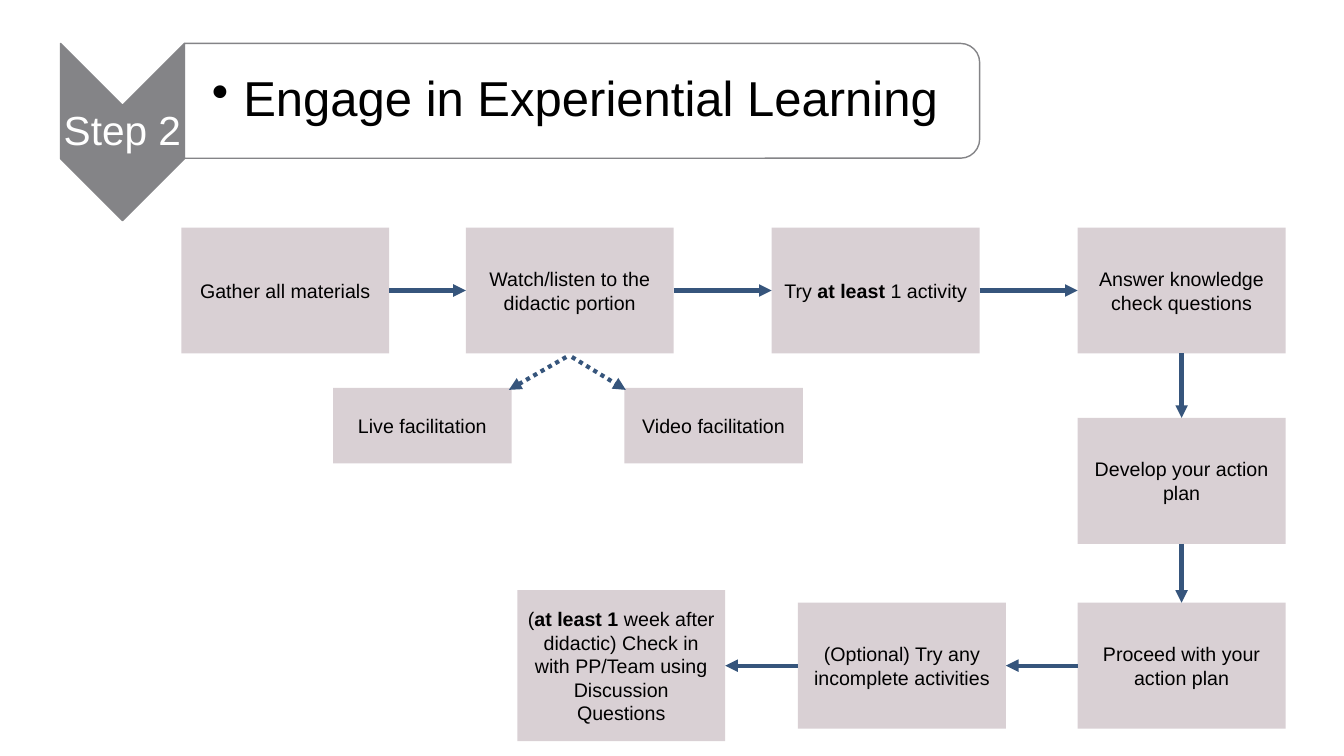
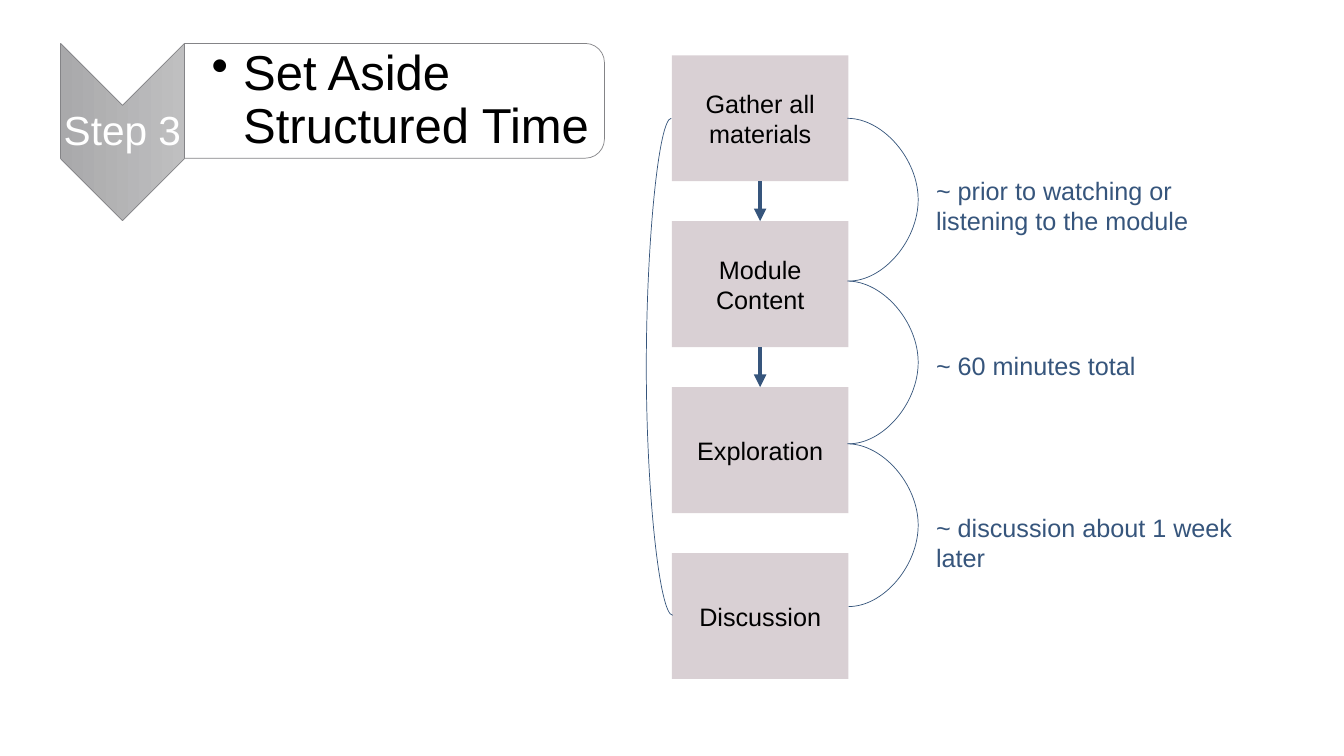
from typing import NamedTuple, Optional

from lxml import etree
from pptx import Presentation
from pptx import slide as slides
from pptx import util as u
from pptx.dml import color as colors
from pptx.enum import dml, shapes, text
from pptx.oxml import ns
from pptx.shapes import autoshape, connector
from pptx.text import text as texts

Pt = u.Pt
FONT = "Arial"
BLACK, WHITE = "000000", "FFFFFF"
PLUM, NAVY, GRAY = "6D4C5C", "36557C", "848487"
BOTTOM, LEFT, TOP, RIGHT = 2, 1, 0, 3


class Rect(NamedTuple):
    left: float
    top: float
    width: float
    height: float


class Heading(NamedTuple):
    step: str
    title: str
    tab_width: float
    line_width: float
    gradient: tuple[str, ...] = ()


class Task(NamedTuple):
    name: str
    words: str          # bold parts stand between ** marks
    rect: Rect


class Link(NamedTuple):
    start: str
    start_side: int
    end: str
    end_side: int


class Note(NamedTuple):
    words: str
    top: float
    height: float


# Shared helpers
def rgb(value: str) -> colors.RGBColor:
    return colors.RGBColor.from_string(value)


def add_xml(parent, tag: str, **attributes: str):
    return etree.SubElement(parent, ns.qn(tag), attributes)


def paint(box: autoshape.Shape, fill: str, opacity: int = 100,
          line: Optional[str] = None, line_width: float = 1) -> None:
    box.shadow.inherit = False
    box.fill.solid()
    box.fill.fore_color.rgb = rgb(fill)
    if opacity < 100:
        tint = box.fill._xPr.find(ns.qn("a:solidFill"))[0]
        add_xml(tint, "a:alpha", val=str(opacity * 1000))
    if line:
        box.line.color.rgb = rgb(line)
        box.line.width = Pt(line_width)
    else:
        box.line.fill.background()


def write(box: autoshape.Shape, words: str, size: float, color: str,
          align: text.PP_ALIGN, anchor: text.MSO_ANCHOR) -> texts._Paragraph:
    frame = box.text_frame
    frame.word_wrap = True
    frame.vertical_anchor = anchor
    para = frame.paragraphs[0]
    para.alignment = align
    for index, part in enumerate(words.split("**")):
        if part:
            span = para.add_run()
            span.text = part
            span.font.name, span.font.size = FONT, Pt(size)
            span.font.bold = index % 2 == 1
            span.font.color.rgb = rgb(color)
    return para


def add_label(page: slides.Slide, rect: Rect, inset: Optional[float] = None) -> autoshape.Shape:
    box = page.shapes.add_textbox(*map(Pt, rect))
    if inset is not None:
        frame = box.text_frame
        frame.margin_left = Pt(inset)
        frame.margin_right = frame.margin_top = frame.margin_bottom = Pt(1.5)
    return box


def add_turned(page: slides.Slide, kind: shapes.MSO_SHAPE, rect: Rect) -> autoshape.Shape:
    """Add a shape turned by 90 degrees that fills rect after turning."""
    left = rect.left + (rect.width - rect.height) / 2
    top = rect.top + (rect.height - rect.width) / 2
    box = page.shapes.add_shape(kind, Pt(left), Pt(top), Pt(rect.height), Pt(rect.width))
    box.rotation = 90
    return box


def add_line(page: slides.Slide, start: tuple[float, float], end: tuple[float, float],
             width: float, kind=shapes.MSO_CONNECTOR.STRAIGHT) -> connector.Connector:
    line = page.shapes.add_connector(kind, *map(Pt, start + end))
    line.line.color.rgb = rgb(NAVY)
    line.line.width = Pt(width)
    add_xml(line._element.spPr, "a:effectLst")
    return line


def add_arrow(page: slides.Slide, start: tuple[float, float] = (0, 0),
              end: tuple[float, float] = (0, 0), dotted: bool = False) -> connector.Connector:
    arrow = add_line(page, start, end, 3)
    if dotted:
        arrow.line.dash_style = dml.MSO_LINE.ROUND_DOT
    add_xml(arrow.line._get_or_add_ln(), "a:tailEnd", type="triangle")
    return arrow


def add_bracket(page: slides.Slide, x: float, top: float, bottom: float, reach: float) -> None:
    """Add a curve that bulges sideways by reach from a 1 pt wide frame."""
    curve = add_line(page, (x, top), (x + 1, bottom), 0.5, shapes.MSO_CONNECTOR.CURVE)
    geometry = curve._element.spPr.find(ns.qn("a:prstGeom"))
    guides = geometry.find(ns.qn("a:avLst"))
    if guides is None:
        guides = add_xml(geometry, "a:avLst")
    add_xml(guides, "a:gd", name="adj1", fmla=f"val {round(reach * 100000)}")


def add_heading(page: slides.Slide, heading: Heading) -> None:
    # Step marker
    chevron = add_turned(page, shapes.MSO_SHAPE.CHEVRON, Rect(43.25, 31, 88.5, 126.5))
    paint(chevron, GRAY, line=GRAY, line_width=heading.line_width)
    if heading.gradient:
        chevron.fill.gradient()
        chevron.fill.gradient_angle = 270
        for stop, color in zip(chevron.fill.gradient_stops, heading.gradient):
            stop.color.rgb = rgb(color)
    step = add_label(page, Rect(43.25, 75.5, 88.5, 38), 1.5)
    para = write(step, heading.step, 29, WHITE, text.PP_ALIGN.CENTER, text.MSO_ANCHOR.MIDDLE)
    para.line_spacing = 0.9

    # Title tab
    tab = add_turned(page, shapes.MSO_SHAPE.ROUND_2_SAME_RECTANGLE,
                     Rect(131.75, 31, heading.tab_width, 82))
    paint(tab, WHITE, 90, GRAY, heading.line_width)
    title = add_label(page, Rect(131.75, 35, heading.tab_width - 4, 74), 19.5)
    para = write(title, heading.title, 35, BLACK, text.PP_ALIGN.LEFT, text.MSO_ANCHOR.MIDDLE)
    properties = para._p.get_or_add_pPr()
    properties.set("marL", str(Pt(22.5)))
    properties.set("indent", str(Pt(-22.5)))
    add_xml(properties, "a:buChar", char="•")
    para.line_spacing = 0.9


def add_flow(page: slides.Slide, tasks: list[Task], links: list[Link], size: float) -> None:
    boxes = {}
    for task in tasks:
        box = page.shapes.add_shape(shapes.MSO_SHAPE.RECTANGLE, *map(Pt, task.rect))
        paint(box, PLUM, 26)
        write(box, task.words, size, BLACK, text.PP_ALIGN.CENTER, text.MSO_ANCHOR.MIDDLE)
        boxes[task.name] = box
    for link in links:
        arrow = add_arrow(page)
        arrow.begin_connect(boxes[link.start], link.start_side)
        arrow.end_connect(boxes[link.end], link.end_side)


# Slide 1: learning steps
def build_learning(page: slides.Slide) -> None:
    width, height = 148.5, 90
    row, last_row = 162.5, 430.5
    watch_x, try_x, answer_x = (332.75 + 218.5 * column for column in range(3))
    tasks = [
        Task("gather", "Gather all materials", Rect(129.5, row, width, height)),
        Task("watch", "Watch/listen to the didactic portion", Rect(watch_x, row, width, height)),
        Task("try", "Try **at least **1 activity", Rect(try_x, row, width, height)),
        Task("answer", "Answer knowledge check questions", Rect(answer_x, row, width, height)),
        Task("live", "Live facilitation", Rect(238, 277, 127.5, 54)),
        Task("video", "Video facilitation", Rect(446, 277, 127.5, 54)),
        Task("develop", "Develop your action plan", Rect(answer_x, 298.5, width, height)),
        Task("proceed", "Proceed with your action plan",
             Rect(answer_x, last_row, width, height)),
        Task("optional", "(Optional) Try any incomplete activities",
             Rect(570, last_row, width, height)),
        Task("check", "(**at least 1** week after didactic) Check in with PP/Team "
             "using Discussion Questions", Rect(369.5, 421.5, width, 108)),
    ]
    links = [
        Link("gather", RIGHT, "watch", LEFT),
        Link("watch", RIGHT, "try", LEFT),
        Link("try", RIGHT, "answer", LEFT),
        Link("answer", BOTTOM, "develop", TOP),
        Link("develop", BOTTOM, "proceed", TOP),
        Link("proceed", LEFT, "optional", RIGHT),
        Link("optional", LEFT, "check", RIGHT),
    ]
    add_flow(page, tasks, links, 14)
    add_arrow(page, (404.5, 255), (363.5, 278.5), dotted=True)
    add_arrow(page, (408.5, 255), (447, 278.5), dotted=True)
    add_heading(page, Heading("Step 2", "Engage in Experiential Learning", 568, 1))


# Slide 2: time plan
def build_time_plan(page: slides.Slide) -> None:
    stages = ["Gather all materials", "Module Content", "Exploration", "Discussion"]
    tasks = [Task(words, words, Rect(480, 39.5 + 118.5 * index, 126, 90))
             for index, words in enumerate(stages)]
    links = [Link(start, BOTTOM, end, TOP) for start, end in zip(stages[:2], stages[1:3])]
    add_flow(page, tasks, links, 18)

    # Time brackets and their notes
    first, pitch = 84.5, 116.25
    for index in range(3):
        add_bracket(page, 605.25, first + pitch * index, first + pitch * (index + 1), 51)
    add_bracket(page, 479.5, first, 439.5, -18)
    notes = [
        Note("~ prior to watching or listening to the module", 121.5, 41),
        Note("~ 60 minutes total", 246.5, 24.5),
        Note("~ discussion about 1 week later", 362.5, 24.5),
    ]
    for note in notes:
        box = add_label(page, Rect(661.5, note.top, 240, note.height))
        write(box, note.words, 18, NAVY, text.PP_ALIGN.LEFT, text.MSO_ANCHOR.TOP)
        box.text_frame.auto_size = text.MSO_AUTO_SIZE.SHAPE_TO_FIT_TEXT
    add_heading(page, Heading("Step 3", "Set Aside Structured Time", 300, 0.5,
                              ("BFBFC0", "A9A9AB")))


def main() -> None:
    deck = Presentation()
    deck.slide_width, deck.slide_height = Pt(960), Pt(540)
    for build in (build_learning, build_time_plan):
        build(deck.slides.add_slide(deck.slide_layouts[6]))
    deck.save("out.pptx")


if __name__ == "__main__":
    main()
